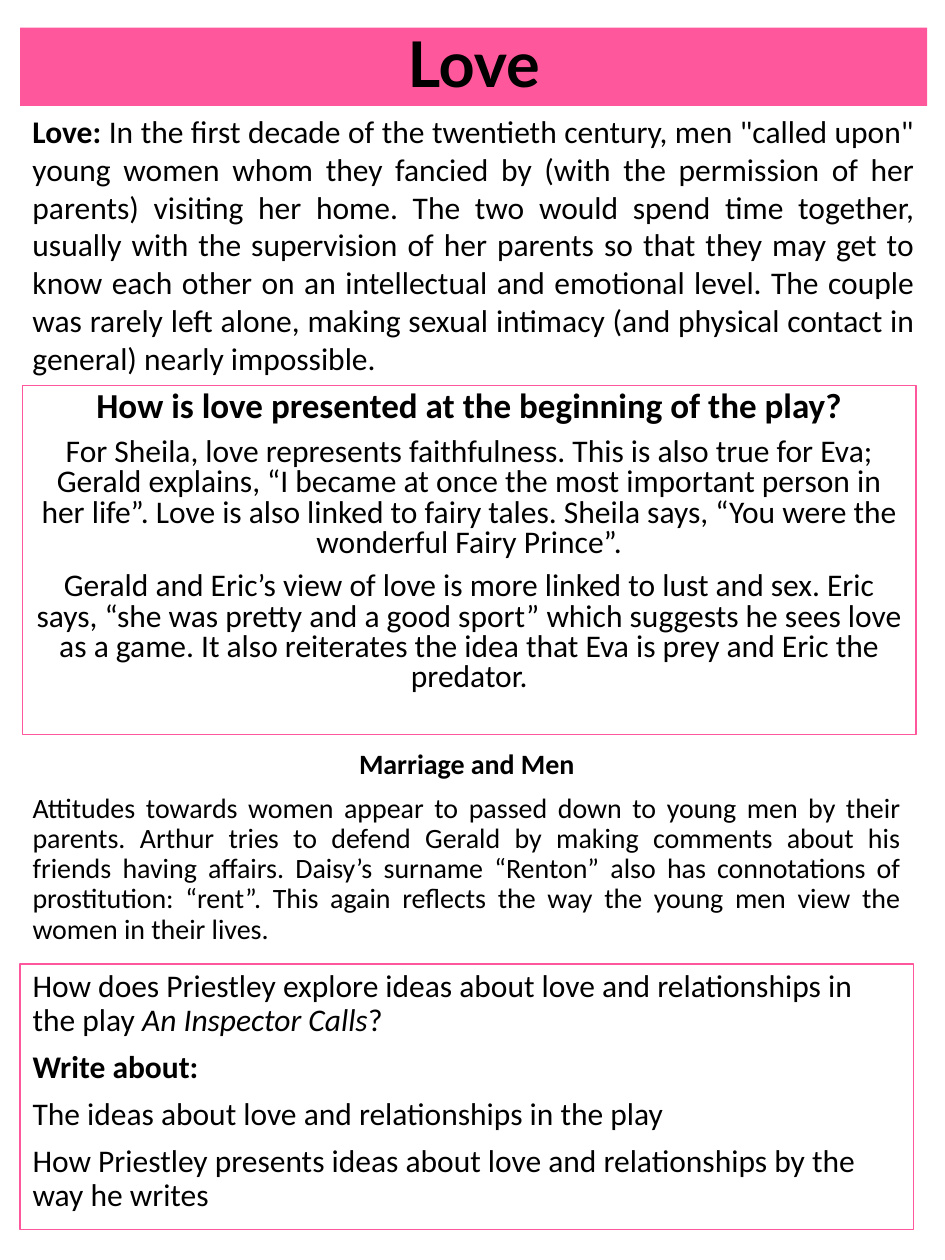
from pptx import Presentation
from pptx.dml.color import RGBColor as RGB
from pptx.enum.text import MSO_ANCHOR as Anchor, PP_ALIGN as Align
from pptx.util import Inches, Pt

THEME = {
    "pink": RGB.from_string("FF579B"),
    "ink": RGB.from_string("000000"),
    "head": "Lato",
    "body": "Calibri",
    "title": 36,
    "lead": 20,
    "text": 18,
    "small": 16,
    "line": 0.75,
    "gap": 7.5,
}
LEFT, CENTER, JUST = Align.LEFT, Align.CENTER, Align.JUSTIFY

# Each paragraph: (alignment, size, runs); each run: (text, style),
# where the style is "b" for bold, "i" for italic or "" for plain.
TITLE = [(CENTER, "title", [("Love", "b")])]

INTRO = [(JUST, "text", [
    ("Love:", "b"),
    (' In the first decade of the twentieth century, men "called upon" young '
     "women whom they fancied by (with the permission of her parents) visiting "
     "her home. The two would spend time together, usually with the "
     "supervision of her parents so that they may get to know each other on an "
     "intellectual and emotional level. The couple was rarely left alone, "
     "making sexual intimacy (and physical contact in general) nearly "
     "impossible.", ""),
])]

START = [
    (CENTER, "lead",
     [("How is love presented at the beginning of the play?", "b")]),
    (CENTER, "text", [
        ("For Sheila, love represents faithfulness. This is also true for Eva; "
         "Gerald explains, “I became at once the most important person in her "
         "life”. Love is also linked to fairy tales. Sheila says, “You were "
         "the wonderful Fairy Prince”.", "")]),
    (CENTER, "text", [
        ("Gerald and Eric’s view of love is more linked to lust and sex. Eric "
         "says, “she was pretty and a good sport” which suggests he sees love "
         "as a game. It also reiterates the idea that Eva is prey and Eric the "
         "predator.", "")]),
]

MEN = [
    (CENTER, "small", [("Marriage and Men", "b")]),
    (JUST, "small", [
        ("Attitudes towards women appear to passed down to young men by their "
         "parents. Arthur tries to defend Gerald by making comments about his "
         "friends having affairs. Daisy’s surname “Renton” also has "
         "connotations of prostitution: “rent”. This again reflects the way "
         "the young men view the women in their lives.", "")]),
]

TASK = [
    (LEFT, "text", [
        ("How does Priestley explore ideas about love and relationships in "
         "the play ", ""),
        ("An Inspector Calls", "i"),
        ("?", "")]),
    (LEFT, "text", [("Write about:", "b")]),
    (LEFT, "text",
     [("The ideas about love and relationships in the play", "")]),
    (LEFT, "text", [
        ("How Priestley presents ideas about love and relationships by the "
         "way he writes", "")]),
]

# (paragraphs, (left, top, width, height), look, line spacing, gap before)
PARTS = [
    (TITLE, (0.16, 0.22, 7.2, 0.62), "band", 0.9, 0),
    (INTRO, (0.16, 0.84, 7.2, 2.22), "plain", 1.0, 0),
    (START, (0.18, 3.06, 7.09, 2.77), "frame", 0.8, THEME["gap"]),
    (MEN, (0.16, 5.91, 7.09, 1.32), "plain", 0.9, THEME["gap"]),
    (TASK, (0.16, 7.65, 7.09, 2.11), "frame", 0.9, THEME["gap"]),
]


def add_part(slide, paras, area, look, space, gap):
    box = slide.shapes.add_textbox(*map(Inches, area))
    frame = box.text_frame
    frame.word_wrap = True
    if look == "band":
        box.fill.solid()
        box.fill.fore_color.rgb = THEME["pink"]
        frame.vertical_anchor = Anchor.MIDDLE
    elif look == "frame":
        box.line.color.rgb = THEME["pink"]
        box.line.width = Pt(THEME["line"])
    face = THEME["head" if look == "band" else "body"]
    for i, (align, size, runs) in enumerate(paras):
        para = frame.add_paragraph() if i else frame.paragraphs[0]
        para.alignment = align
        para.line_spacing = space
        para.space_before = Pt(gap)
        for text, style in runs:
            run = para.add_run()
            run.text = text
            font = run.font
            font.name = face
            font.size = Pt(THEME[size])
            font.color.rgb = THEME["ink"]
            font.bold = style == "b"
            font.italic = style == "i"


def main():
    deck = Presentation()
    deck.slide_width, deck.slide_height = Inches(7.5), Inches(10)
    slide = deck.slides.add_slide(deck.slide_layouts[6])
    for part in PARTS:
        add_part(slide, *part)
    deck.save("out.pptx")


if __name__ == "__main__":
    main()
